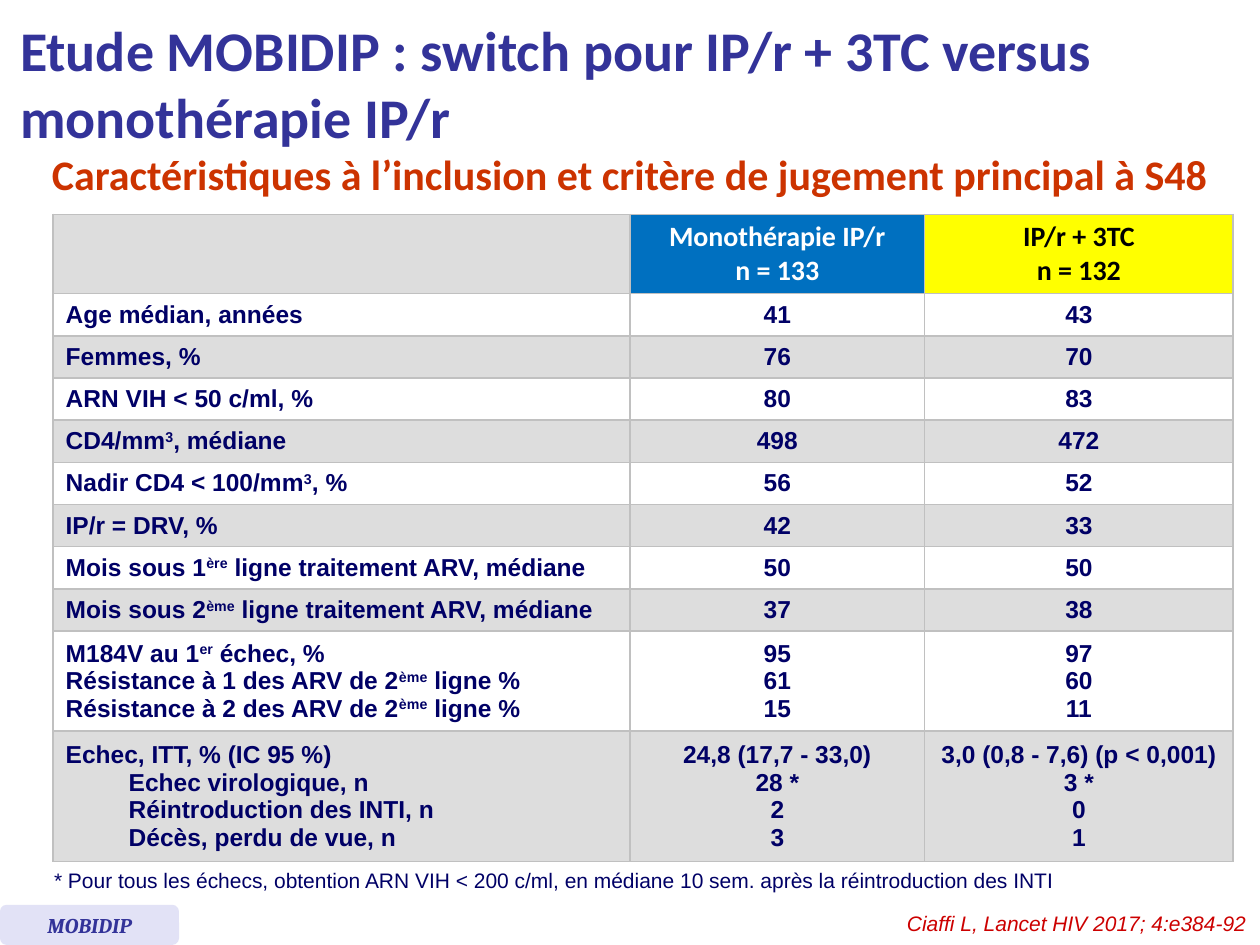
from dataclasses import dataclass

from pptx import Presentation
from pptx.dml.color import RGBColor
from pptx.enum.shapes import MSO_SHAPE
from pptx.enum.text import MSO_ANCHOR, MSO_AUTO_SIZE, PP_ALIGN
from pptx.oxml import parse_xml
from pptx.oxml.ns import nsdecls
from pptx.util import Cm, Pt


@dataclass(frozen=True)
class Theme:
    blue: str = "333399"
    navy: str = "000066"
    rust: str = "CC3300"
    red: str = "CC0000"
    white: str = "FFFFFF"
    black: str = "000000"
    grey: str = "DDDDDD"
    rule: str = "C0C0C0"
    mono: str = "0070C0"
    dual: str = "FFFF00"
    pale: str = "E2E2F6"
    title: int = 32
    sub: int = 24
    head: int = 16
    cell: int = 14
    note: int = 12


THEME = Theme()
LEFT, MID, RIGHT = PP_ALIGN.LEFT, PP_ALIGN.CENTER, PP_ALIGN.RIGHT


def style(name, size, color, **more):
    return {"name": name, "size": Pt(size), "color": color, **more}


TITLE = style("Calibri", THEME.title, THEME.blue, bold=True)
SUB = style("Calibri", THEME.sub, THEME.rust, bold=True)
CELL = style("Arial", THEME.cell, THEME.navy, bold=True)
NOTE = style("Arial", THEME.note, THEME.navy)
CITE = style("Arial", THEME.note, THEME.red, italic=True)
TAG = style("Cambria", THEME.note, THEME.blue, bold=True, italic=True)
HEADS = [(THEME.grey, THEME.black), (THEME.mono, THEME.white),
         (THEME.dual, THEME.black)]

COLS = [11.63, 5.94, 6.22]
HIGH = [1.6] + [0.85] * 8 + [2.02, 2.63]
ROWS = [
    ("", "Monothérapie IP/r\nn = 133", "IP/r + 3TC\nn = 132"),
    ("Age médian, années", "41", "43"),
    ("Femmes, %", "76", "70"),
    ("ARN VIH < 50 c/ml, %", "80", "83"),
    ("CD4/mm^3^, médiane", "498", "472"),
    ("Nadir CD4 < 100/mm^3^, %", "56", "52"),
    ("IP/r = DRV, %", "42", "33"),
    ("Mois sous 1^ère^ ligne traitement ARV, médiane", "50", "50"),
    ("Mois sous 2^ème^ ligne traitement ARV, médiane", "37", "38"),
    ("M184V au 1^er^ échec, %\nRésistance à 1 des ARV de 2^ème^ ligne %\n"
     "Résistance à 2 des ARV de 2^ème^ ligne %",
     "95\n61\n15", "97\n60\n11"),
    ("Echec, ITT, % (IC 95 %)\n>Echec virologique, n\n"
     ">Réintroduction des INTI, n\n>Décès, perdu de vue, n",
     "24,8 (17,7 - 33,0)\n28 *\n2\n3",
     "3,0 (0,8 - 7,6) (p < 0,001)\n3 *\n0\n1"),
]


class Deck:
    def __init__(self, theme):
        self.theme = theme
        self.prs = Presentation()
        self.prs.slide_width, self.prs.slide_height = Cm(25.4), Cm(19.05)
        self.slide = self.prs.slides.add_slide(self.prs.slide_layouts[5])

    def put(self, frame, text, form, align=LEFT):
        for i, line in enumerate(text.split("\n")):
            para = frame.paragraphs[0] if i == 0 else frame.add_paragraph()
            para.alignment = align
            if line.startswith(">"):
                line = line[1:]
                para.level = 1
                props = para._p.get_or_add_pPr()
                props.set("marL", str(Cm(1.27)))
                props.set("indent", "0")
            for n, part in enumerate(line.split("^")):
                if not part:
                    continue
                run = para.add_run()
                run.text = part
                for key, value in form.items():
                    if key == "color":
                        run.font.color.rgb = RGBColor.from_string(value)
                    else:
                        setattr(run.font, key, value)
                if n % 2:
                    run._r.get_or_add_rPr().set("baseline", "30000")

    def title(self, box, text, form):
        shape = self.slide.shapes.title
        for key, value in zip(("left", "top", "width", "height"), box):
            setattr(shape, key, Cm(value))
        frame = shape.text_frame
        frame.vertical_anchor = MSO_ANCHOR.MIDDLE
        frame.auto_size = MSO_AUTO_SIZE.NONE
        self.put(frame, text, form)

    def text(self, box, text, form, align=LEFT, wrap=True, lead=None):
        frame = self.slide.shapes.add_textbox(*map(Cm, box)).text_frame
        frame.word_wrap = wrap
        frame.auto_size = MSO_AUTO_SIZE.SHAPE_TO_FIT_TEXT
        self.put(frame, text, form, align)
        if lead:
            frame.paragraphs[0].line_spacing = Pt(lead)

    def badge(self, box, text, form):
        shape = self.slide.shapes.add_shape(
            MSO_SHAPE.ROUNDED_RECTANGLE, *map(Cm, box))
        shape.shadow.inherit = False
        shape.fill.solid()
        shape.fill.fore_color.rgb = RGBColor.from_string(self.theme.pale)
        shape.line.fill.background()
        frame = shape.text_frame
        frame.word_wrap = False
        frame.vertical_anchor = MSO_ANCHOR.MIDDLE
        self.put(frame, text, form, MID)

    def border(self, cell):
        props = cell._tc.get_or_add_tcPr()
        for side in ("lnL", "lnR", "lnT", "lnB"):
            props.append(parse_xml(
                f'<a:{side} {nsdecls("a")} w="{Pt(1)}"><a:solidFill>'
                f'<a:srgbClr val="{self.theme.rule}"/></a:solidFill></a:{side}>'))

    def table(self, left, top, cols, high, rows):
        table = self.slide.shapes.add_table(
            len(rows), len(cols), Cm(left), Cm(top),
            Cm(sum(cols)), Cm(sum(high))).table
        table.first_row = table.horz_banding = False
        for col, width in zip(table.columns, cols):
            col.width = Cm(width)
        for r, (row, height) in enumerate(zip(rows, high)):
            table.rows[r].height = Cm(height)
            for c, text in enumerate(row):
                fill, form = (self.theme.white if r % 2 else self.theme.grey), CELL
                if r == 0:
                    fill, ink = HEADS[c]
                    form = style("Calibri", self.theme.head, ink, bold=True)
                cell = table.cell(r, c)
                cell.vertical_anchor = MSO_ANCHOR.MIDDLE
                cell.margin_top = cell.margin_bottom = Cm(0.1)
                self.border(cell)
                cell.fill.solid()
                cell.fill.fore_color.rgb = RGBColor.from_string(fill)
                self.put(cell.text_frame, text, form, MID if c else LEFT)


def main():
    deck = Deck(THEME)
    deck.title((0.15, 0.13, 22.76, 3.07),
               "Etude MOBIDIP : switch pour IP/r + 3TC versus monothérapie IP/r",
               TITLE)
    deck.text((0.76, 3.35, 23.88, 0.89),
              "Caractéristiques à l’inclusion et critère de jugement principal à S48",
              SUB, MID, lead=15.2)
    deck.table(1.07, 4.32, COLS, HIGH, ROWS)
    deck.text((0.84, 17.37, 20.85, 0.76),
              "* Pour tous les échecs, obtention ARN VIH < 200 c/ml, "
              "en médiane 10 sem. après la réintroduction des INTI",
              NOTE, wrap=False)
    deck.badge((0, 18.24, 3.61, 0.81), "MOBIDIP", TAG)
    deck.text((12.12, 18.24, 13.26, 0.76),
              "Ciaffi L, Lancet HIV 2017; 4:e384-92", CITE, RIGHT)
    deck.prs.save("out.pptx")


if __name__ == "__main__":
    main()
